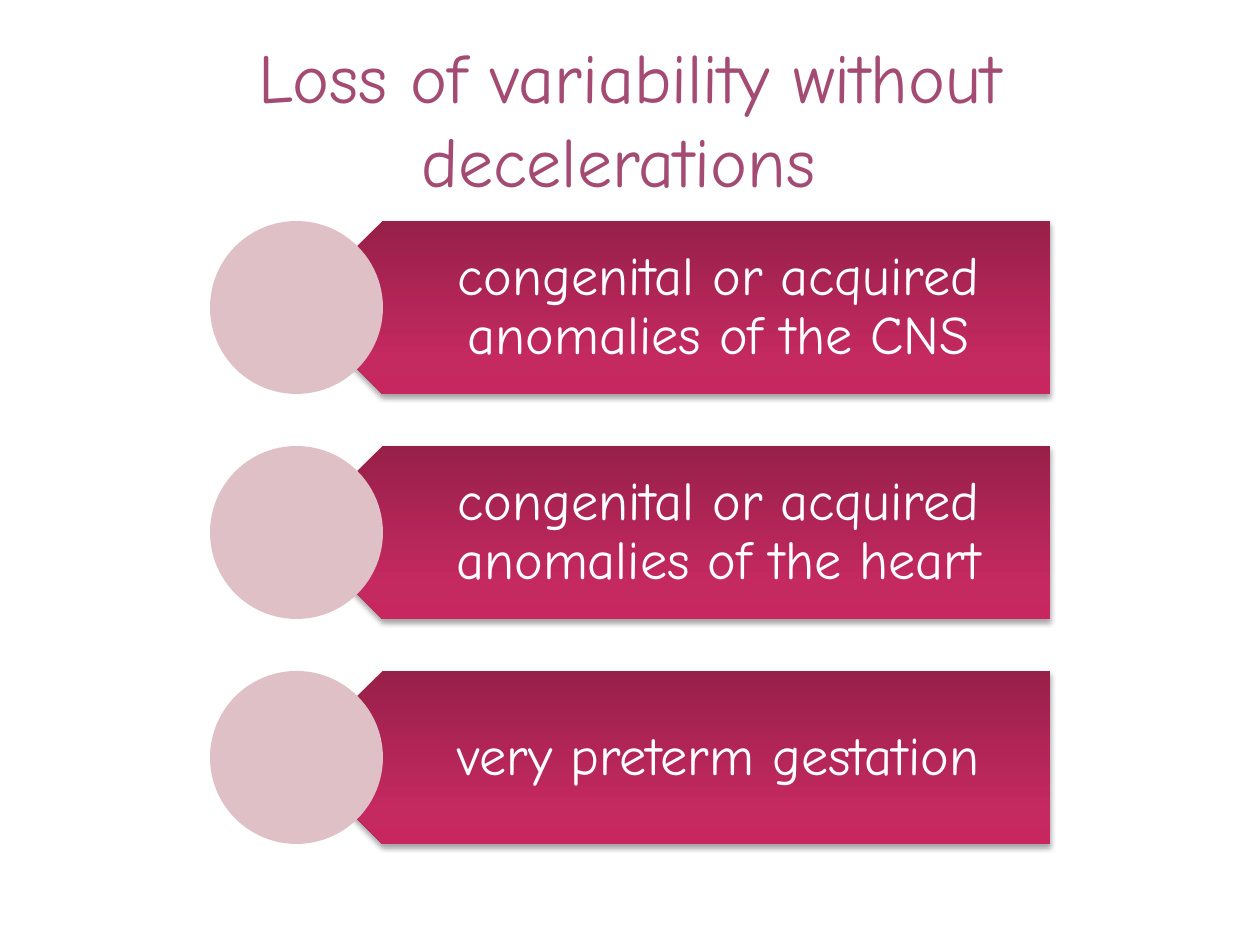
from lxml.etree import SubElement
from pptx import Presentation
from pptx.dml.color import RGBColor
from pptx.enum.shapes import MSO_SHAPE
from pptx.enum.text import MSO_ANCHOR, PP_ALIGN
from pptx.oxml.ns import qn
from pptx.util import Emu, Pt

EMU_PER_PX = 914400 // 126
FONT = "Comic Neue"
COLORS = {
    "title": "A34B73",
    "label": "FFFFFF",
    "circle": "DFC0C7",
    "shadow": "000000",
}
BANNER_STOPS = [(0, "972049"), (80, "C4295F"), (100, "C8265F")]
CAUSES = [
    "congenital or acquired anomalies of the CNS",
    "congenital or acquired anomalies of the heart",
    "very preterm gestation",
]
FIRST_TOP = 221
ROW_PITCH = 225
ROW_HEIGHT = 173


def px(*lengths):
    return [Emu(length * EMU_PER_PX) for length in lengths]


def add_text(page, text, bounds, size, color, insets=(13, 6, 13, 6), spacing=1.0):
    box = page.shapes.add_textbox(*px(*bounds))
    frame = box.text_frame
    frame.word_wrap = True
    frame.vertical_anchor = MSO_ANCHOR.MIDDLE
    (frame.margin_left, frame.margin_top,
     frame.margin_right, frame.margin_bottom) = px(*insets)
    para = frame.paragraphs[0]
    para.alignment = PP_ALIGN.CENTER
    para.line_spacing = spacing
    span = para.add_run()
    span.text = text
    span.font.name = FONT
    span.font.size = Pt(size)
    span.font.color.rgb = RGBColor.from_string(COLORS[color])


def add_plain_shape(page, kind, bounds):
    shape = page.shapes.add_shape(kind, *px(*bounds))
    shape.shadow.inherit = False
    shape.line.fill.background()
    return shape


def set_gradient(shape, stops, angle):
    shape.fill.gradient()
    shape.fill.gradient_angle = angle
    stop_list = shape._element.spPr.find(qn("a:gradFill")).find(qn("a:gsLst"))
    for stop in list(stop_list):
        stop_list.remove(stop)
    for percent, color in stops:
        stop = SubElement(stop_list, qn("a:gs"), pos=str(percent * 1000))
        SubElement(stop, qn("a:srgbClr"), val=color)


def add_shadow(shape, blur, distance, opacity):
    effects = shape._element.spPr.find(qn("a:effectLst"))
    shadow = SubElement(
        effects, qn("a:outerShdw"), blurRad=str(Pt(blur)), dist=str(Pt(distance)),
        dir="5400000", rotWithShape="0",
    )
    color = SubElement(shadow, qn("a:srgbClr"), val=COLORS["shadow"])
    SubElement(color, qn("a:alpha"), val=str(opacity * 1000))


def add_cause(page, text, top):
    banner = add_plain_shape(page, MSO_SHAPE.PENTAGON, (296, top, 754, ROW_HEIGHT))
    banner.rotation = 180
    set_gradient(banner, BANNER_STOPS, angle=90)
    add_shadow(banner, blur=3.1, distance=1.8, opacity=35)
    add_text(page, text, (340, top, 710, ROW_HEIGHT), size=31, color="label",
             insets=(77, 16, 30, 16), spacing=0.9)
    circle = add_plain_shape(page, MSO_SHAPE.OVAL, (210, top, ROW_HEIGHT, ROW_HEIGHT))
    circle.fill.solid()
    circle.fill.fore_color.rgb = RGBColor.from_string(COLORS["circle"])


def main():
    deck = Presentation()
    deck.slide_width, deck.slide_height = px(1260, 945)
    page = deck.slides.add_slide(deck.slide_layouts[6])
    add_text(page, "Loss of variability without decelerations ",
             (63, 38, 1134, 158), size=40, color="title")
    for row, cause in enumerate(CAUSES):
        add_cause(page, cause, FIRST_TOP + row * ROW_PITCH)
    deck.save("out.pptx")


if __name__ == "__main__":
    main()
